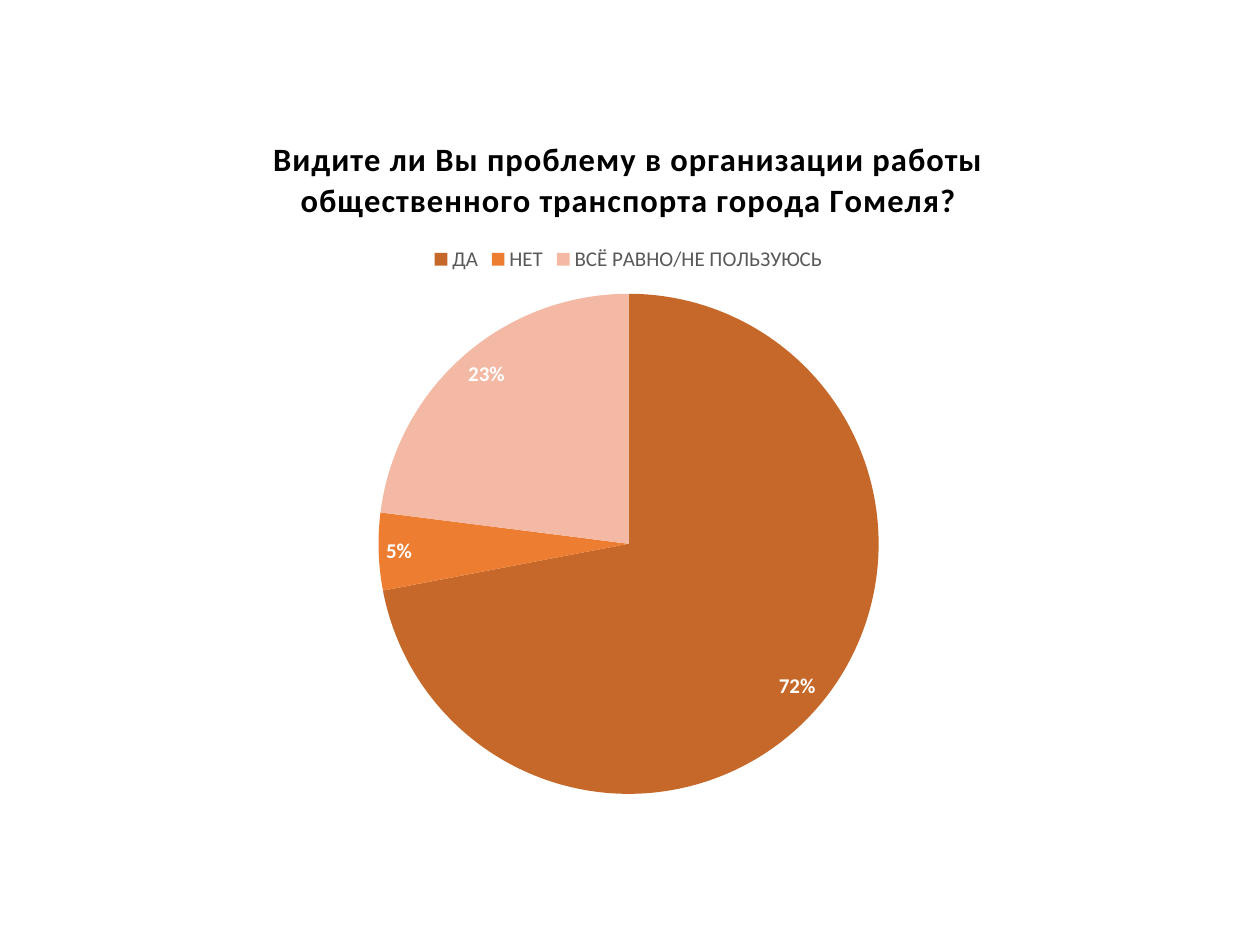
from lxml import etree
from pptx import Presentation
from pptx.chart.data import CategoryChartData
from pptx.dml.color import RGBColor
from pptx.enum import chart as ch
from pptx.oxml.ns import qn
from pptx.util import Pt

SURVEY = [("ДА", 72, "C56829"), ("НЕТ", 5, "ED7D31"),
          ("ВСЁ РАВНО/НЕ ПОЛЬЗУЮСЬ", 23, "F3B9A4")]
QUESTION = ("Видите ли Вы проблему в организации работы "
            "общественного транспорта города Гомеля?")


def set_font(font, size, color, bold=False):
    """Apply the chart typeface with a size, hex colour and weight."""
    font.name, font.size, font.bold = "Calibri", Pt(size), bold
    font.color.rgb = RGBColor.from_string(color)


def place(element, before, **percents):
    """Fix a chart part at percents of the chart area, ahead of a sibling tag."""
    for old in element.findall(qn("c:layout")):
        element.remove(old)
    layout = etree.Element(qn("c:layout"))
    manual = etree.SubElement(layout, qn("c:manualLayout"))
    if "w" in percents:
        etree.SubElement(manual, qn("c:layoutTarget")).set("val", "inner")
    for side in "xy":
        etree.SubElement(manual, qn(f"c:{side}Mode")).set("val", "edge")
    for key, value in percents.items():
        etree.SubElement(manual, qn(f"c:{key}")).set("val", str(value / 100))
    element.find(qn(before)).addprevious(layout)


def add_survey_pie(s, left, top, width, height):
    """Add the titled survey pie in the given box, in points."""
    data = CategoryChartData()
    data.categories = [name for name, _, _ in SURVEY]
    data.add_series("Series 1", [value for _, value, _ in SURVEY])
    chart = s.shapes.add_chart(ch.XL_CHART_TYPE.PIE, Pt(left), Pt(top),
                               Pt(width), Pt(height), data).chart
    set_font(chart.font, 10, "000000")

    chart.has_title = True
    title = chart.chart_title
    title.include_in_layout = False
    r = title.text_frame.paragraphs[0].add_run()
    r.text = QUESTION
    set_font(r.font, 18.6, "000000", True)
    r._r.get_or_add_rPr().set("spc", "50")
    place(title._element, "c:overlay", x=15.6, y=2.8)

    chart.has_legend = True
    legend = chart.legend
    legend.position = ch.XL_LEGEND_POSITION.TOP
    legend.include_in_layout = False
    set_font(legend.font, 12, "595959")

    plot = chart.plots[0]
    plot.vary_by_categories = True
    place(plot._element.getparent(), "c:pieChart", x=26.2, y=26.1, w=47.6, h=71.4)
    series = plot.series[0]
    for i, (_, _, color) in enumerate(SURVEY):
        fill = series.points[i].format.fill
        fill.solid()
        fill.fore_color.rgb = RGBColor.from_string(color)
    labels = series.data_labels
    labels.show_percentage, labels.show_value = True, False
    labels.number_format, labels.number_format_is_linked = "0%", False
    labels.position = ch.XL_LABEL_POSITION.INSIDE_END
    set_font(labels.font, 12, "FFFFFF", True)


def main():
    """Build and save the survey slide."""
    prs = Presentation()
    prs.slide_width, prs.slide_height = Pt(720), Pt(540)
    s = prs.slides.add_slide(prs.slide_layouts[6])
    add_survey_pie(s, 59, 63.4, 600.5, 400.3)
    prs.save("out.pptx")


if __name__ == "__main__":
    main()
